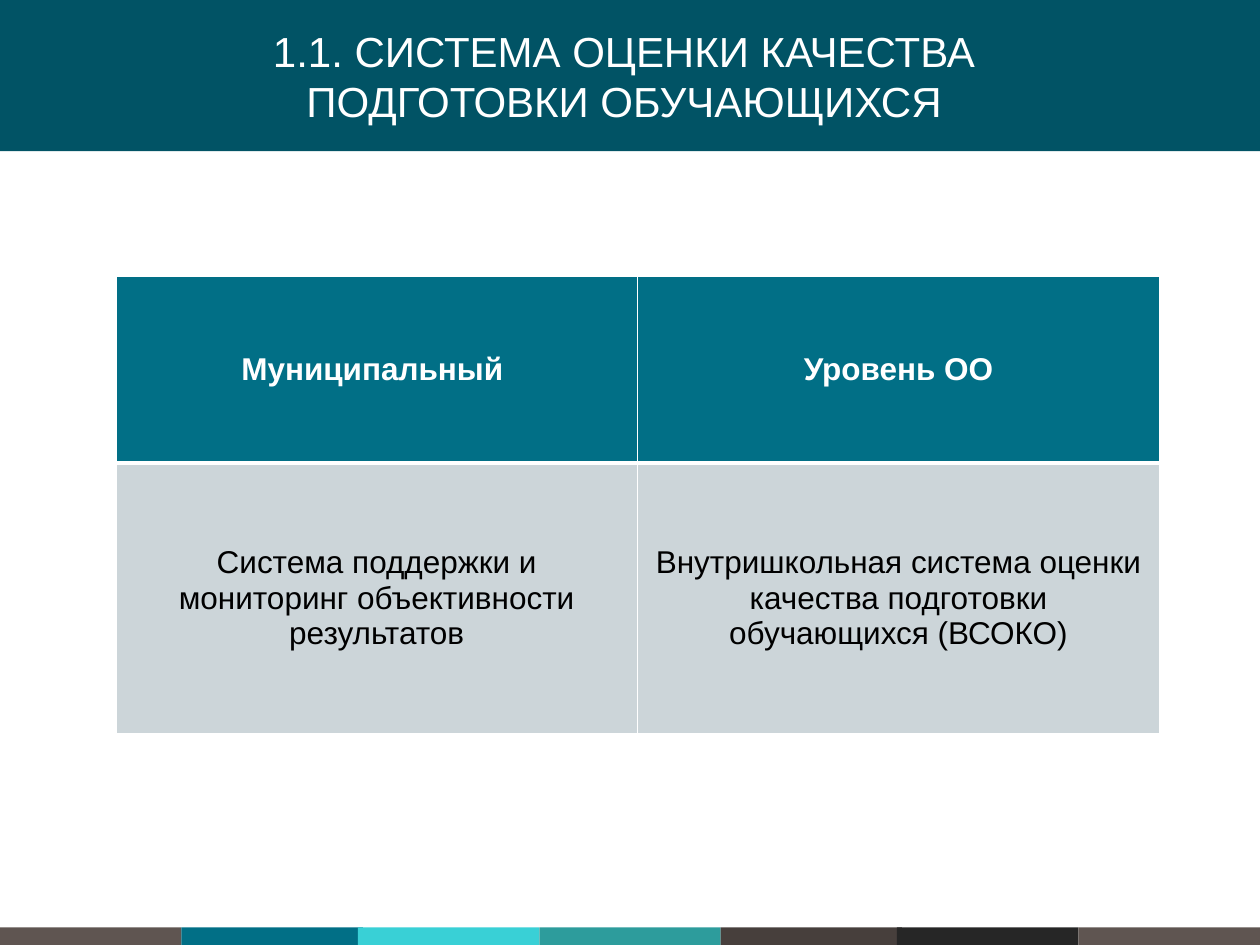
from lxml import etree
from pptx import Presentation
from pptx.dml.color import RGBColor
from pptx.enum.shapes import MSO_SHAPE
from pptx.enum.text import MSO_ANCHOR, PP_ALIGN
from pptx.oxml.ns import qn
from pptx.util import Pt

RECT = MSO_SHAPE.RECTANGLE
MIDDLE = MSO_ANCHOR.MIDDLE
CENTER = PP_ALIGN.CENTER

# Content
TITLE = "1.1. СИСТЕМА ОЦЕНКИ КАЧЕСТВА \vПОДГОТОВКИ ОБУЧАЮЩИХСЯ "
ROWS = [
    ["Муниципальный ", "Уровень ОО"],
    ["Система поддержки и мониторинг объективности результатов",
     "Внутришкольная система оценки качества подготовки обучающихся (ВСОКО)"],
]
# Fill, text colour, bold, height, and top and bottom border widths of each row
ROW_STYLES = [
    ("016F86", "FFFFFF", True, 106.5, 1, 3),
    ("CCD5D9", "000000", False, 154.8, 3, 1),
]
# Left edge and colour of each footer band
BANDS = [(0, "5F5551"), (103.7, "016F86"), (204.5, "39D0D6"),
         (308.2, "2D9C9C"), (411.8, "473F3C"), (512.6, "262626"),
         (616.3, "5F5551")]

W, H = 720, 540
BAND_W, BAND_H = 103.7, 10.1
TABLE_X, TABLE_Y, COL_W = 66.2, 158, 298.2


def paint(fill, color):
    fill.solid()
    fill.fore_color.rgb = RGBColor.from_string(color)


def style_text(tf, size, color, bold=False):
    for p in tf.paragraphs:
        p.alignment = CENTER
        p.font.name = "Arial"
        p.font.size = Pt(size)
        p.font.bold = bold
        p.font.color.rgb = RGBColor.from_string(color)


def set_borders(cell, top, bottom):
    tcPr = cell._tc.get_or_add_tcPr()
    sides = [("a:lnL", 1), ("a:lnR", 1), ("a:lnT", top), ("a:lnB", bottom)]
    for i, (tag, width) in enumerate(sides):
        ln = etree.Element(qn(tag), w=str(Pt(width)))
        fill = etree.SubElement(ln, qn("a:solidFill"))
        etree.SubElement(fill, qn("a:srgbClr"), val="FFFFFF")
        tcPr.insert(i, ln)


prs = Presentation()
prs.slide_width, prs.slide_height = Pt(W), Pt(H)
s = prs.slides.add_slide(prs.slide_layouts[5])
paint(s.background.fill, "FFFFFF")

# Footer bands
for x, color in BANDS:
    sp = s.shapes.add_shape(RECT, Pt(x), Pt(H - BAND_H), Pt(BAND_W), Pt(BAND_H))
    sp.shadow.inherit = False
    paint(sp.fill, color)
    sp.line.fill.background()

# Title
title = s.shapes.title
title.left, title.top, title.width, title.height = 0, 0, Pt(W), Pt(86.4)
paint(title.fill, "015365")
tf = title.text_frame
tf.text = TITLE
tf.vertical_anchor = MIDDLE
style_text(tf, 24, "FFFFFF")

# Table
table_h = sum(style[3] for style in ROW_STYLES)
table = s.shapes.add_table(len(ROWS), 2, Pt(TABLE_X), Pt(TABLE_Y),
                           Pt(2 * COL_W), Pt(table_h)).table
for col in table.columns:
    col.width = Pt(COL_W)
for row, texts, style in zip(table.rows, ROWS, ROW_STYLES):
    fill, color, bold, height, top, bottom = style
    row.height = Pt(height)
    for cell, text in zip(row.cells, texts):
        cell.text = text
        cell.vertical_anchor = MIDDLE
        paint(cell.fill, fill)
        set_borders(cell, top, bottom)
        style_text(cell.text_frame, 18, color, bold)

prs.save("out.pptx")
